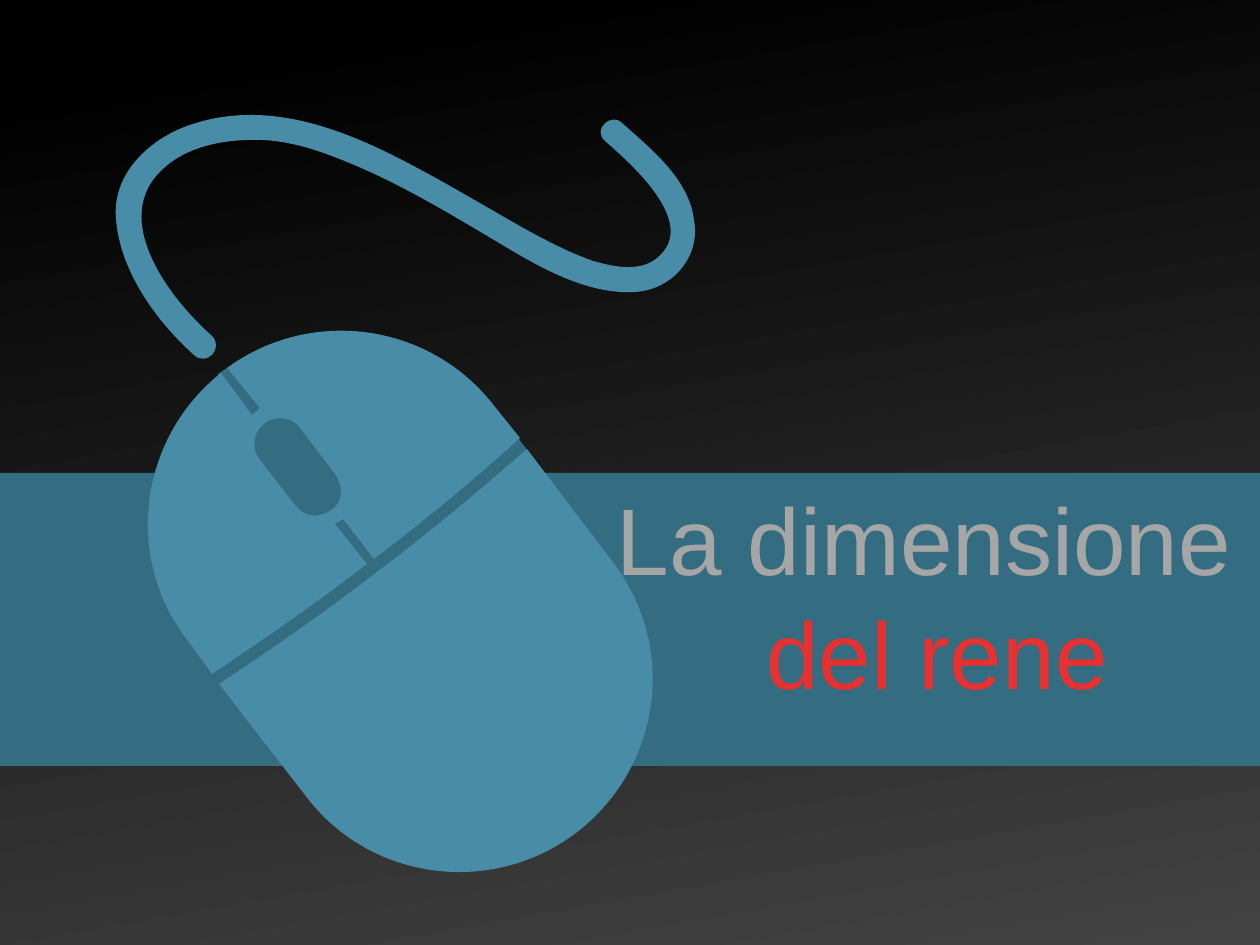
from pptx import Presentation
from pptx import util as u
from pptx.dml.color import RGBColor
from pptx.enum import shapes, text
from pptx.oxml.ns import qn

PX = 914400 / 126
COLORS = {"black": "000000", "gray": "434343", "dark": "346C81",
          "light": "488CA7", "title": "A6A6A6", "red": "E63130"}


def px(n):
    return u.Emu(round(n * PX))


def draw(parent, color, *loops):
    """Draw closed loops: a start point, then lines (x, y) or cubic curves (6 numbers)."""
    pen = None
    for (x, y), *segs in loops:
        if pen is None:
            pen = parent.build_freeform(px(x), px(y), scale=1.0)
        else:
            pen.move_to(px(x), px(y))
        dots = [(px(seg[i]), px(seg[i + 1])) for seg in segs for i in range(0, len(seg), 2)]
        pen.add_line_segments(dots, close=True)
    shape = pen.convert_to_shape()
    # Join the three points of each curve into one cubic segment
    lines = iter(list(shape.element.iter(qn("a:lnTo"))))
    for _, *segs in loops:
        for seg in segs:
            curve = next(lines)
            if len(seg) == 6:
                curve.tag = qn("a:cubicBezTo")
                for _ in range(2):
                    line = next(lines)
                    curve.append(line[0])
                    line.getparent().remove(line)
    shape.shadow.inherit = False
    shape.fill.solid()
    shape.fill.fore_color.rgb = RGBColor.from_string(COLORS[color])
    shape.line.fill.background()


prs = Presentation()
prs.slide_width, prs.slide_height = px(1260), px(945)
slide = prs.slides.add_slide(prs.slide_layouts[6])

back = slide.background.fill
back.gradient()
back.gradient_angle = 280
for stop, pos, name in zip(back.gradient_stops, (0.08, 1), ("black", "gray")):
    stop.position = pos
    stop.color.rgb = RGBColor.from_string(COLORS[name])

# Dark base that shows through the gaps of the mouse
draw(slide.shapes, "dark",
     [(199, 456), (218, 374), (239, 360), (509, 426), (547, 476), (344, 696), (176, 533)])

band = slide.shapes.add_shape(shapes.MSO_SHAPE.RECTANGLE, 0, px(473), px(1260), px(293))
band.shadow.inherit = False
band.fill.solid()
band.fill.fore_color.rgb = RGBColor.from_string(COLORS["dark"])
band.line.fill.background()

title = slide.shapes.add_textbox(px(360), px(475), px(1154), px(242))
frame = title.text_frame
frame.word_wrap = True
frame.text = "La dimensione \ndel rene"
for para, name in zip(frame.paragraphs, ("title", "red")):
    para.alignment = text.PP_ALIGN.CENTER
    para.font.name = "Arial"
    para.font.size = u.Pt(54)
    para.font.color.rgb = RGBColor.from_string(COLORS[name])

mouse = slide.shapes.add_group_shape().shapes
buttons = [(520, 438), (495, 407), (431, 323, 312, 306, 227, 368),
           (260, 408), (252, 415), (221, 373), (139, 438, 123, 558, 188, 641),
           (212, 674), (263, 640, 315, 604, 367, 564),
           (335, 524), (343, 519), (374, 559), (425, 520, 474, 480, 520, 438)]
wheel = [(331, 510), (319, 519, 304, 517, 295, 505), (260, 460),
         (251, 449, 253, 432, 265, 423), (276, 415, 292, 417, 300, 428),
         (335, 474), (344, 486, 343, 503, 331, 510)]
palm = [(377, 572), (325, 612, 272, 649, 219, 684), (305, 795),
        (369, 881, 491, 897, 576, 833), (662, 767, 678, 646, 612, 561),
        (527, 449), (480, 490, 430, 532, 377, 572)]
cord = [(694, 220), (689, 179, 651, 149, 622, 123), (611, 112, 592, 130, 605, 141),
        (631, 164, 704, 227, 653, 261), (635, 272, 611, 266, 593, 261),
        (570, 253, 547, 241, 525, 229), (479, 203, 433, 175, 386, 152),
        (324, 122, 257, 102, 190, 125), (149, 139, 112, 174, 116, 219),
        (120, 271, 156, 321, 194, 355), (207, 367, 224, 348, 212, 336),
        (171, 300, 108, 219, 163, 169), (185, 148, 220, 140, 252, 140),
        (287, 139, 321, 151, 354, 165), (404, 186, 452, 215, 499, 243),
        (539, 267, 587, 295, 635, 292), (672, 290, 701, 257, 694, 220)]
draw(mouse, "light", buttons, wheel)
draw(mouse, "light", palm)
draw(mouse, "light", cord)

prs.save("out.pptx")
